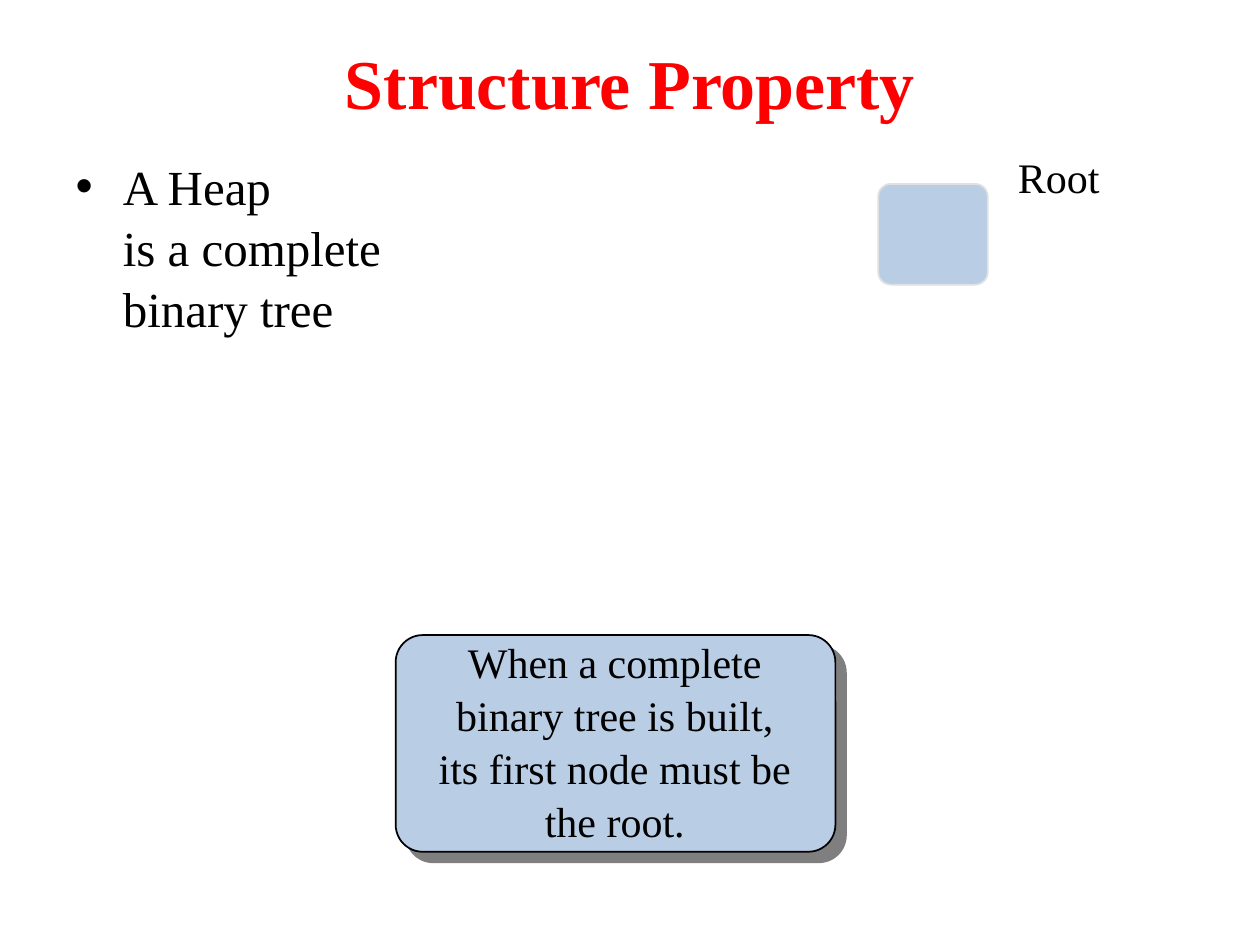
from dataclasses import dataclass

from lxml import etree
from pptx import Presentation
from pptx.dml.color import RGBColor
from pptx.enum.shapes import MSO_SHAPE as Shape
from pptx.enum.text import MSO_ANCHOR as Anchor, PP_ALIGN as Align
from pptx.oxml.ns import qn
from pptx.util import Pt


@dataclass(frozen=True)
class Theme:
    font: str = "Times New Roman"
    title: RGBColor = RGBColor(0xFF, 0x00, 0x00)
    ink: RGBColor = RGBColor(0x00, 0x00, 0x00)
    node: RGBColor = RGBColor(0xB9, 0xCD, 0xE5)
    node_line: RGBColor = RGBColor(0xE0, 0xE0, 0xE0)
    title_size: int = 40
    body_size: int = 28
    label_size: int = 24


theme = Theme()


def write(shape, lines, size, color, bold=False, align=Align.LEFT, spacing=(1,)):
    """Fill a shape with one paragraph a line; the last spacing value repeats."""
    frame = shape.text_frame
    frame.text = "\n".join(lines)
    font_format = {"name": theme.font, "size": Pt(size), "bold": bold}
    for index, paragraph in enumerate(frame.paragraphs):
        paragraph.alignment = align
        paragraph.line_spacing = spacing[min(index, len(spacing) - 1)]
        for run in paragraph.runs:
            for name, value in font_format.items():
                setattr(run.font, name, value)
            run.font.color.rgb = color


def add_box(left, top, width, height, corner, line):
    """Add a rounded node-coloured box with a 1 pt outline."""
    box = slide.shapes.add_shape(
        Shape.ROUNDED_RECTANGLE, Pt(left), Pt(top), Pt(width), Pt(height))
    box.adjustments[0] = corner
    box.shadow.inherit = False
    box.fill.solid()
    box.fill.fore_color.rgb = theme.node
    box.line.color.rgb = line
    box.line.width = Pt(1)
    return box


presentation = Presentation()
presentation.slide_width, presentation.slide_height = Pt(720), Pt(540)
slide = presentation.slides.add_slide(presentation.slide_layouts[1])

# Title and list
title, body = slide.shapes.title, slide.placeholders[1]
for placeholder, top, height in ((title, 21.6, 50.4), (body, 84.24, 398.16)):
    place = {"left": 36, "top": top, "width": 648, "height": height}
    for name, value in place.items():
        setattr(placeholder, name, Pt(value))
title.text_frame.vertical_anchor = Anchor.MIDDLE
write(title, ["Structure Property"], theme.title_size, theme.title,
      bold=True, align=Align.CENTER)
write(body, ["A Heap \vis a complete \vbinary tree"], theme.body_size, theme.ink,
      spacing=(1.04,))

# Callout with an offset shadow
callout = add_box(226.08, 362.88, 251.28, 123.84, 0.125, theme.ink)
effects = callout.element.spPr.find(qn("a:effectLst"))
shadow = etree.SubElement(effects, qn("a:outerShdw"), blurRad="0",
                          dist=str(Pt(8.5)), dir="2700000", algn="ctr", rotWithShape="0")
shadow_color = etree.SubElement(shadow, qn("a:srgbClr"), val=str(theme.ink))
etree.SubElement(shadow_color, qn("a:alpha"), val="50000")
callout_text = slide.shapes.add_textbox(Pt(231.12), Pt(367.92), Pt(240.48), Pt(113.76))
callout_text.text_frame.word_wrap = True
callout_text.text_frame.vertical_anchor = Anchor.MIDDLE
write(callout_text,
      ["When a complete", "binary tree is built,", "its first node must be", "the root."],
      theme.label_size, theme.ink, align=Align.CENTER, spacing=(0.93, 1.05))

# Root node and its label
add_box(501.84, 105.12, 62.64, 57.6, 0.126, theme.node_line)
root_label = slide.shapes.add_textbox(Pt(574.56), Pt(84.96), Pt(61.2), Pt(36))
root_label.text_frame.word_wrap = False
write(root_label, ["Root"], theme.label_size, theme.ink, spacing=(0.95,))

presentation.save("out.pptx")
